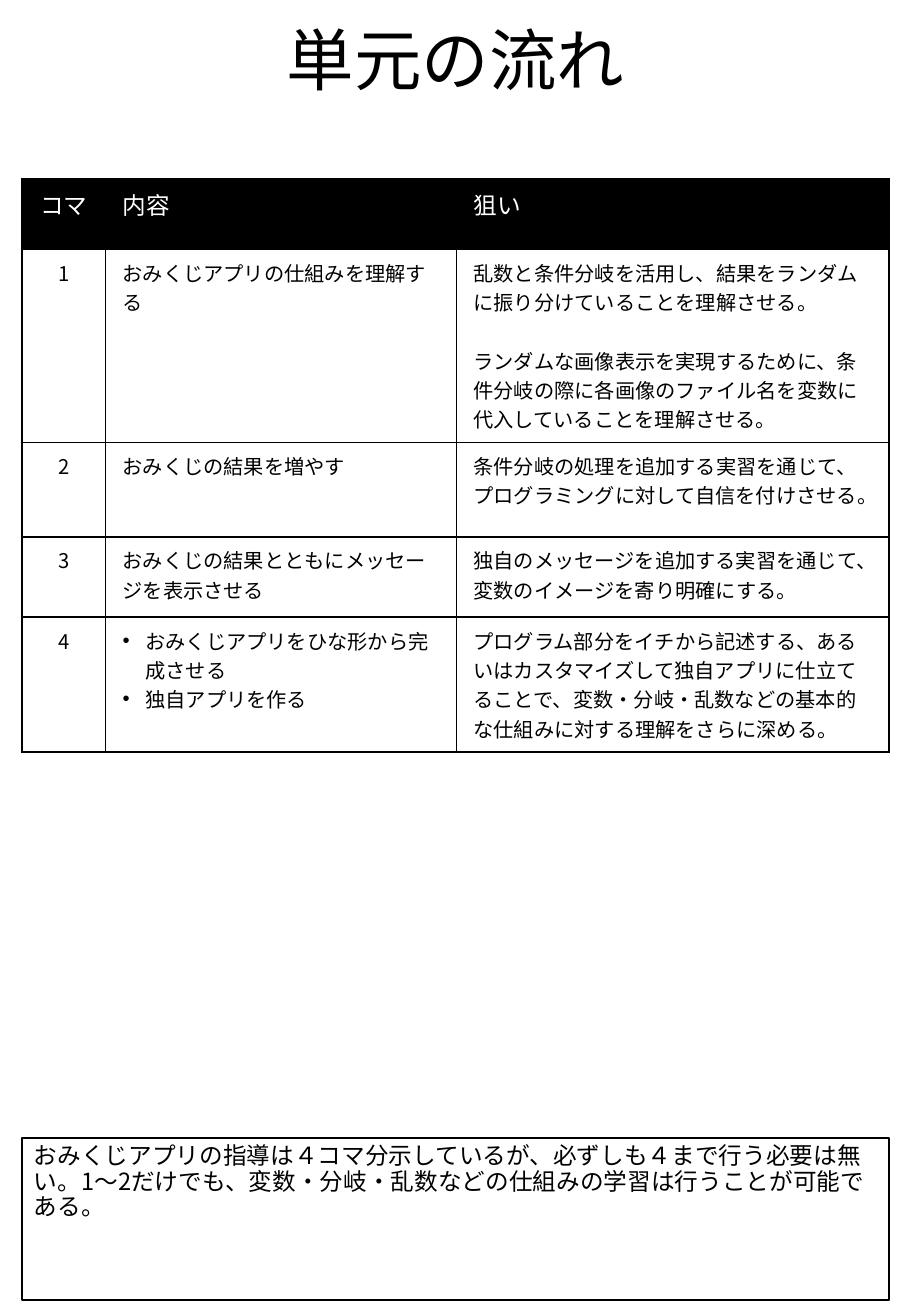
"""Builds the one-page lesson plan slide."""
from lxml import etree
from pptx import Presentation
from pptx.dml.color import RGBColor
from pptx.enum import shapes, text
from pptx.oxml import ns
from pptx.util import Pt

MID = text.PP_ALIGN.CENTER
LEFT = text.PP_ALIGN.LEFT


def color(code):
    return RGBColor.from_string(code)


def sub(node, tag, **attrs):
    return etree.SubElement(node, ns.qn(tag), attrs)


class Page:
    font = "Noto Sans CJK JP"
    ink = "000000"
    paper = "FFFFFF"

    def __init__(self, deck):
        self.slide = deck.slides.add_slide(deck.slide_layouts[6])

    def label(self, frame, lines, size, ink=ink, bullet=False, **form):
        for i, line in enumerate(lines):
            para = frame.paragraphs[0] if i == 0 else frame.add_paragraph()
            for name, value in form.items():
                if name != "space_before" or i:
                    setattr(para, name, value)
            if bullet:
                props = para._p.get_or_add_pPr()
                props.set("marL", str(Pt(13.5)))
                props.set("indent", str(-Pt(13.5)))
                sub(props, "a:buFont", typeface="Arial")
                sub(props, "a:buChar", char="•")
            run = para.add_run()
            run.text = line
            look = {"name": self.font, "size": Pt(size), "bold": False}
            for name, value in look.items():
                setattr(run.font, name, value)
            run.font.color.rgb = color(ink)
            sub(run._r.get_or_add_rPr(), "a:ea", typeface=self.font)

    def title(self, line, x, y, w, h):
        box = self.slide.shapes.add_textbox(Pt(x), Pt(y), Pt(w), Pt(h))
        box.text_frame.word_wrap = True
        box.text_frame.vertical_anchor = text.MSO_ANCHOR.BOTTOM
        self.label(box.text_frame, [line], 40, alignment=MID, line_spacing=0.9)

    def note(self, line, x, y, w, h):
        box = self.slide.shapes.add_shape(
            shapes.MSO_SHAPE.RECTANGLE, Pt(x), Pt(y), Pt(w), Pt(h))
        box.shadow.inherit = False
        box.fill.solid()
        box.fill.fore_color.rgb = color(self.paper)
        box.line.color.rgb = color(self.ink)
        box.line.width = Pt(1)
        box.text_frame.word_wrap = True
        box.text_frame.vertical_anchor = text.MSO_ANCHOR.TOP
        self.label(box.text_frame, [line], 14, alignment=LEFT,
                   line_spacing=0.9)

    def edge(self, cell):
        props = cell._tc.get_or_add_tcPr()
        for i, tag in enumerate(("a:lnL", "a:lnR", "a:lnT", "a:lnB")):
            line = sub(props, tag, w=str(Pt(1)))
            sub(sub(line, "a:solidFill"), "a:srgbClr", val=self.ink)
            props.insert(i, line)

    def table(self, rows, x, y, wide, high):
        grid = self.slide.shapes.add_table(
            len(rows), len(wide), Pt(x), Pt(y),
            Pt(sum(wide)), Pt(sum(high))).table
        grid.first_row = grid.horz_banding = False
        for col, w in zip(grid.columns, wide):
            col.width = Pt(w)
        for r, (row, h) in enumerate(zip(rows, high)):
            grid.rows[r].height = Pt(h)
            for c, lines in enumerate(row):
                self.cell(grid.cell(r, c), lines, r == 0, c)

    def cell(self, cell, lines, head, c):
        pads = {"margin_left": 10, "margin_right": 10,
                "margin_top": 5, "margin_bottom": 5}
        for name, value in pads.items():
            setattr(cell, name, Pt(value))
        cell.fill.solid()
        cell.fill.fore_color.rgb = color(self.ink if head else self.paper)
        self.edge(cell)
        bullet = c == 1 and len(lines) > 1
        form = {"alignment": MID if c == 0 else LEFT}
        if c == 2:
            form["space_before"] = Pt(17.4)
        self.label(cell.text_frame, lines, 14 if head else 12,
                   self.paper if head else self.ink, bullet, **form)


ROWS = [
    (["コマ"], ["内容"], ["狙い"]),
    (["1"], ["おみくじアプリの仕組みを理解する"],
     ["乱数と条件分岐を活用し、結果をランダムに振り分けていることを理解させる。",
      "ランダムな画像表示を実現するために、条件分岐の際に各画像のファイル名を"
      "変数に代入していることを理解させる。"]),
    (["2"], ["おみくじの結果を増やす"],
     ["条件分岐の処理を追加する実習を通じて、プログラミングに対して"
      "自信を付けさせる。"]),
    (["3"], ["おみくじの結果とともにメッセージを表示させる"],
     ["独自のメッセージを追加する実習を通じて、変数のイメージを寄り明確にする。"]),
    (["4"], ["おみくじアプリをひな形から完成させる", "独自アプリを作る"],
     ["プログラム部分をイチから記述する、あるいはカスタマイズして独自アプリに"
      "仕立てることで、変数・分岐・乱数などの基本的な仕組みに対する理解を"
      "さらに深める。"]),
]


def main():
    deck = Presentation()
    deck.slide_width, deck.slide_height = Pt(540), Pt(780)
    page = Page(deck)
    page.title("単元の流れ", 40.3, 4.3, 459.4, 58.3)
    page.table(ROWS, 13, 105.8, (49.7, 208, 256.3), (42, 114.4, 56.2, 47.5, 79.8))
    page.note("おみくじアプリの指導は４コマ分示しているが、必ずしも４まで行う必要は無い。"
              "1～2だけでも、変数・分岐・乱数などの仕組みの学習は行うことが可能である。",
              13, 674.6, 514, 95.8)
    deck.save("out.pptx")


if __name__ == "__main__":
    main()
